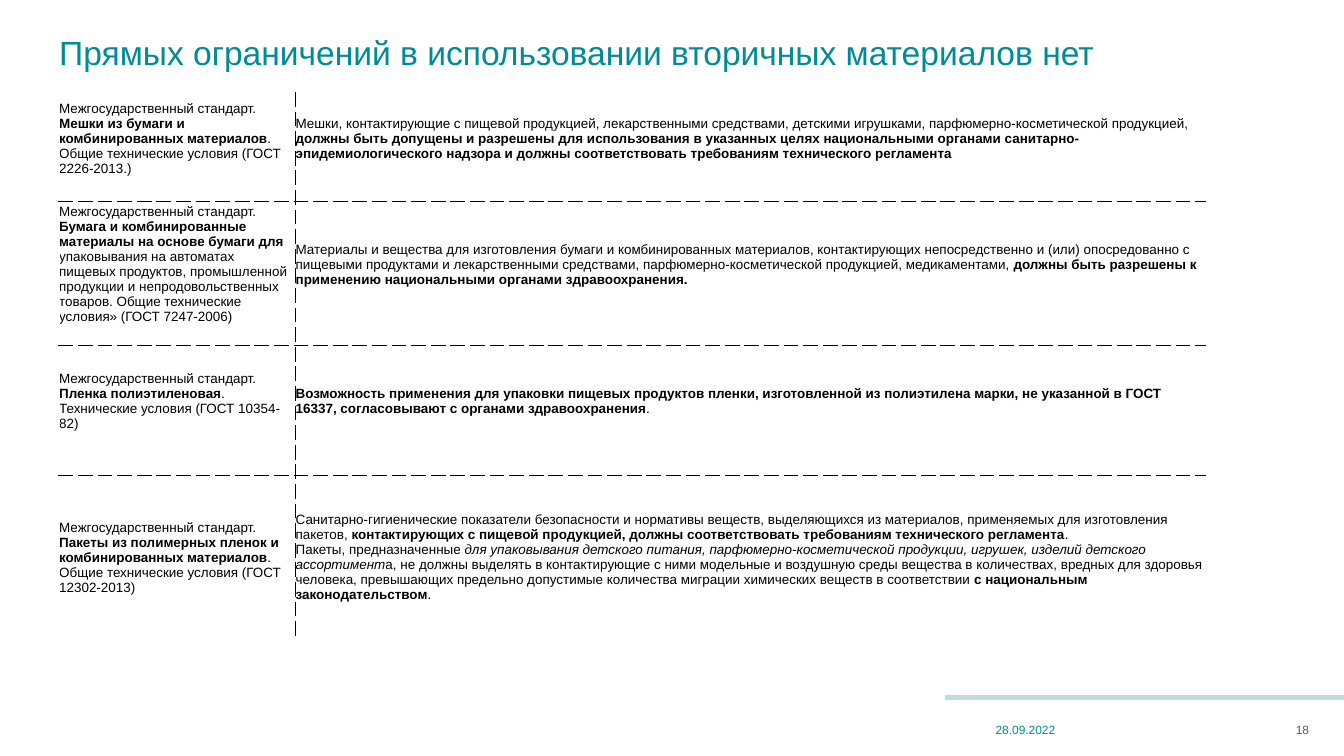
from dataclasses import dataclass

import pptx
import pptx.dml.color
import pptx.enum.shapes
import pptx.enum.text
import pptx.oxml
import pptx.oxml.ns
import pptx.util
from lxml import etree

COLORS = {"teal": "008C95", "text": "000000", "muted": "595959", "bar": "C0DADE"}
FONT = "Arial"
SLIDE_WIDTH = pptx.util.Inches(10)
SLIDE_HEIGHT = SLIDE_WIDTH * 9 // 16
TABLE_POINTS = 7.2
FOOTER_POINTS = 6.4
LINE_SPACE = pptx.util.Inches(0.13)
COLUMN_WIDTHS = (1.76, 6.77)
RIGHT_MARGINS = (0.03, 0)
INTRO = "Межгосударственный стандарт."


@dataclass(frozen=True)
class Span:
    text: str
    bold: bool = False
    italic: bool = False


@dataclass(frozen=True)
class StandardRow:
    height: float
    cells: tuple[list[list[Span]], list[list[Span]]]
    space_below: int = LINE_SPACE


@dataclass(frozen=True)
class FooterItem:
    text: str
    color: str
    left: float
    top: float
    width: float
    height: float


ROWS = [
    StandardRow(0.81, (
        [[Span(INTRO), Span(" Мешки из бумаги и комбинированных материалов", bold=True), Span(".")],
         [Span("Общие технические условия (ГОСТ 2226-2013.)")]],
        [[Span("Мешки, контактирующие с пищевой продукцией, лекарственными средствами, детскими "
               "игрушками, парфюмерно-косметической продукцией,"),
          Span(" должны быть допущены и разрешены для использования в указанных целях "
               "национальными органами санитарно-эпидемиологического надзора и должны "
               "соответствовать требованиям технического регламента", bold=True)]],
    )),
    StandardRow(1.07, (
        [[Span(INTRO),
          Span(" Бумага и комбинированные материалы на основе бумаги для", bold=True),
          Span(" упаковывания на автоматах пищевых продуктов, промышленной продукции и "
               "непродовольственных товаров. Общие технические условия» (ГОСТ 7247-2006)")]],
        [[Span("Материалы и вещества для изготовления бумаги и комбинированных материалов, "
               "контактирующих непосредственно и (или) опосредованно с пищевыми продуктами и "
               "лекарственными средствами, парфюмерно-косметической продукцией, медикаментами,"),
          Span(" должны быть разрешены к применению национальными органами здравоохранения.",
               bold=True)]],
    )),
    StandardRow(0.97, (
        [[Span(INTRO), Span(" Пленка полиэтиленовая", bold=True),
          Span(". Технические условия (ГОСТ 10354-82)")]],
        [[Span("Возможность применения для упаковки пищевых продуктов пленки, изготовленной из "
               "полиэтилена марки, не указанной в ГОСТ 16337, согласовывают с органами "
               "здравоохранения", bold=True),
          Span(".")]],
    )),
    StandardRow(1.22, (
        [[Span(INTRO),
          Span(" Пакеты из полимерных пленок и комбинированных материалов", bold=True), Span(".")],
         [Span("Общие технические условия (ГОСТ 12302-2013)")]],
        [[Span("Санитарно-гигиенические показатели безопасности и нормативы веществ, "
               "выделяющихся из материалов, применяемых для изготовления пакетов,"),
          Span(" контактирующих с пищевой продукцией, должны соответствовать требованиям "
               "технического регламента", bold=True),
          Span(".")],
         [Span("Пакеты, предназначенные"),
          Span(" для упаковывания детского питания, парфюмерно-косметической продукции, "
               "игрушек, изделий детского ассортимент", italic=True),
          Span("а, не должны выделять в контактирующие с ними модельные и воздушную среды "
               "вещества в количествах, вредных для здоровья человека, превышающих предельно "
               "допустимые количества миграции химических веществ в соответствии"),
          Span(" с национальным законодательством", bold=True),
          Span(".")]],
    ), space_below=0),
]

FOOTER = [
    FooterItem("28.09.2022", "teal", 6.83, 5.3, 1.02, 0.18),
    FooterItem("18", "muted", 9.42, 5.29, 0.32, 0.19),
]


def rgb(name: str) -> pptx.dml.color.RGBColor:
    return pptx.dml.color.RGBColor.from_string(COLORS[name])


def style_paragraph(paragraph, points: float, color: str) -> None:
    paragraph.font.name = FONT
    paragraph.font.size = pptx.util.Pt(points)
    paragraph.font.color.rgb = rgb(color)


def clear_margins(box) -> None:
    box.margin_left = box.margin_top = box.margin_right = box.margin_bottom = 0


def add_title(slide, text: str) -> None:
    title = slide.shapes.title
    title.left, title.top = pptx.util.Inches(0.44), pptx.util.Inches(0.24)
    title.width, title.height = pptx.util.Inches(9.28), pptx.util.Inches(0.52)
    frame = title.text_frame
    clear_margins(frame)
    frame.auto_size = pptx.enum.text.MSO_AUTO_SIZE.NONE
    frame.vertical_anchor = pptx.enum.text.MSO_ANCHOR.TOP
    frame.text = text
    paragraph = frame.paragraphs[0]
    paragraph.alignment = pptx.enum.text.PP_ALIGN.LEFT
    style_paragraph(paragraph, 18, "teal")


def add_borders(cell, sides: list[str]) -> None:
    properties = cell._tc.get_or_add_tcPr()
    for position, side in enumerate(sides):
        properties.insert(position, pptx.oxml.parse_xml(
            f'<a:ln{side} {pptx.oxml.ns.nsdecls("a")} w="{pptx.util.Pt(1)}">'
            f'<a:solidFill><a:srgbClr val="{COLORS["text"]}"/></a:solidFill>'
            f'<a:prstDash val="sysDash"/></a:ln{side}>'))


def fill_cell(cell, paragraphs: list[list[Span]], space_below: int, space_right: float) -> None:
    clear_margins(cell)
    cell.margin_bottom = space_below
    cell.margin_right = pptx.util.Inches(space_right)
    cell.vertical_anchor = pptx.enum.text.MSO_ANCHOR.MIDDLE
    cell.fill.background()
    frame = cell.text_frame
    for index, spans in enumerate(paragraphs):
        paragraph = frame.paragraphs[0] if index == 0 else frame.add_paragraph()
        style_paragraph(paragraph, TABLE_POINTS, "text")
        for span in spans:
            run = paragraph.add_run()
            run.text = span.text
            run.font.bold = span.bold
            run.font.italic = span.italic


def add_standards_table(slide, rows: list[StandardRow]) -> None:
    table = slide.shapes.add_table(
        len(rows), len(COLUMN_WIDTHS), pptx.util.Inches(0.44), pptx.util.Inches(0.69),
        pptx.util.Inches(sum(COLUMN_WIDTHS)),
        pptx.util.Inches(sum(row.height for row in rows))).table
    table.first_row = table.horz_banding = False
    for column, width in zip(table.columns, COLUMN_WIDTHS):
        column.width = pptx.util.Inches(width)
    for row_index, row in enumerate(rows):
        table.rows[row_index].height = pptx.util.Inches(row.height)
        for column_index, paragraphs in enumerate(row.cells):
            cell = table.cell(row_index, column_index)
            fill_cell(cell, paragraphs, row.space_below, RIGHT_MARGINS[column_index])
            sides = ["L" if column_index else "R"]
            if row_index > 0:
                sides.append("T")
            if row_index < len(rows) - 1:
                sides.append("B")
            add_borders(cell, sides)


def add_footer_bar(slide) -> None:
    top = pptx.util.Inches(5.19)
    bar = slide.shapes.add_connector(
        pptx.enum.shapes.MSO_CONNECTOR.STRAIGHT, pptx.util.Inches(7.03), top, SLIDE_WIDTH, top)
    bar.line.color.rgb = rgb("bar")
    bar.line.width = pptx.util.Pt(2.75)
    etree.SubElement(bar._element.spPr, pptx.oxml.ns.qn("a:effectLst"))


def add_footer_item(slide, item: FooterItem) -> None:
    box = slide.shapes.add_textbox(
        *map(pptx.util.Inches, (item.left, item.top, item.width, item.height)))
    frame = box.text_frame
    clear_margins(frame)
    frame.word_wrap = True
    frame.vertical_anchor = pptx.enum.text.MSO_ANCHOR.BOTTOM
    frame.text = item.text
    paragraph = frame.paragraphs[0]
    paragraph.alignment = pptx.enum.text.PP_ALIGN.RIGHT
    style_paragraph(paragraph, FOOTER_POINTS, item.color)


def main() -> None:
    presentation = pptx.Presentation()
    presentation.slide_width, presentation.slide_height = SLIDE_WIDTH, SLIDE_HEIGHT
    slide = presentation.slides.add_slide(presentation.slide_layouts[5])
    add_footer_bar(slide)
    add_title(slide, "Прямых ограничений в использовании вторичных материалов нет")
    add_standards_table(slide, ROWS)
    for item in FOOTER:
        add_footer_item(slide, item)
    presentation.save("out.pptx")


if __name__ == "__main__":
    main()
